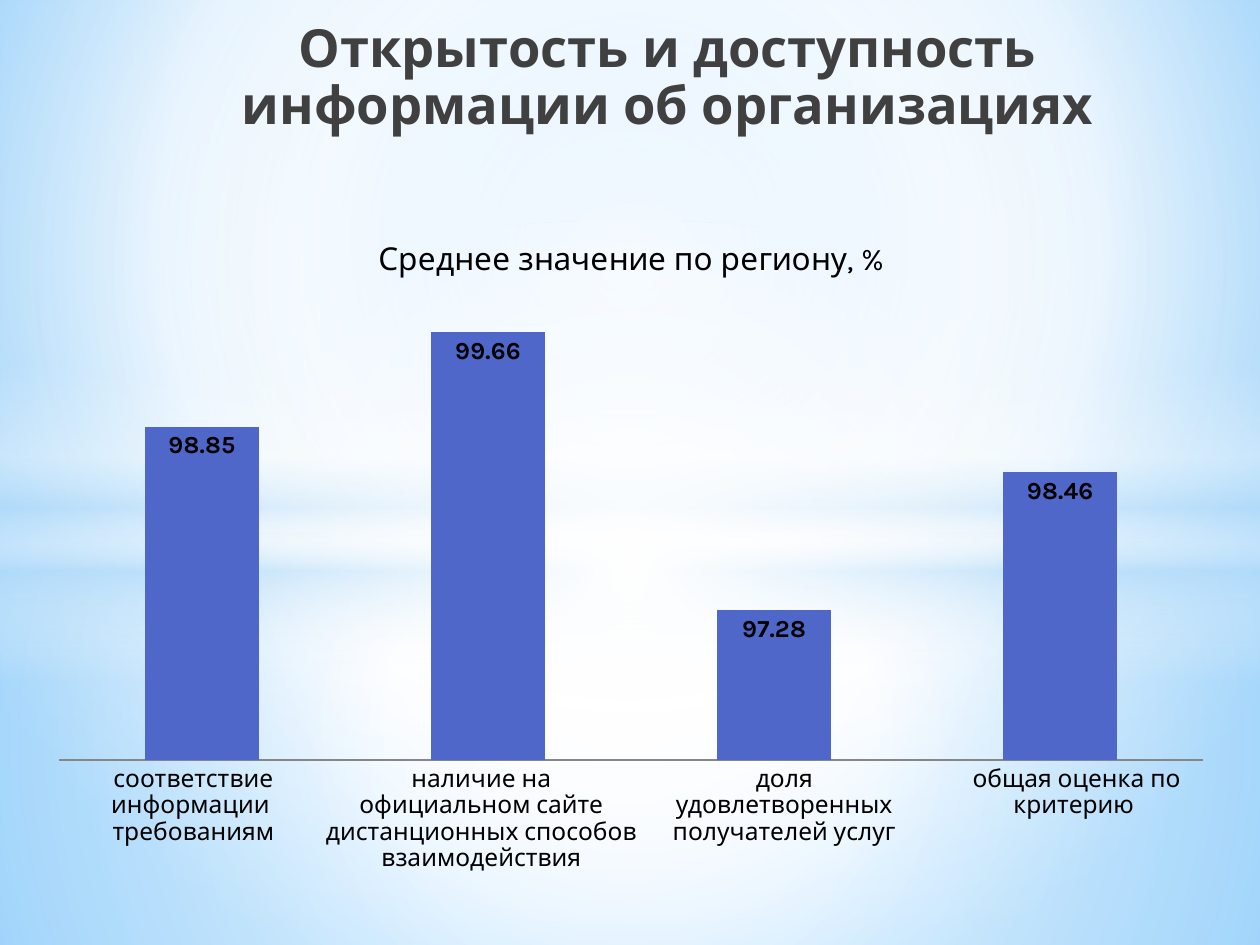
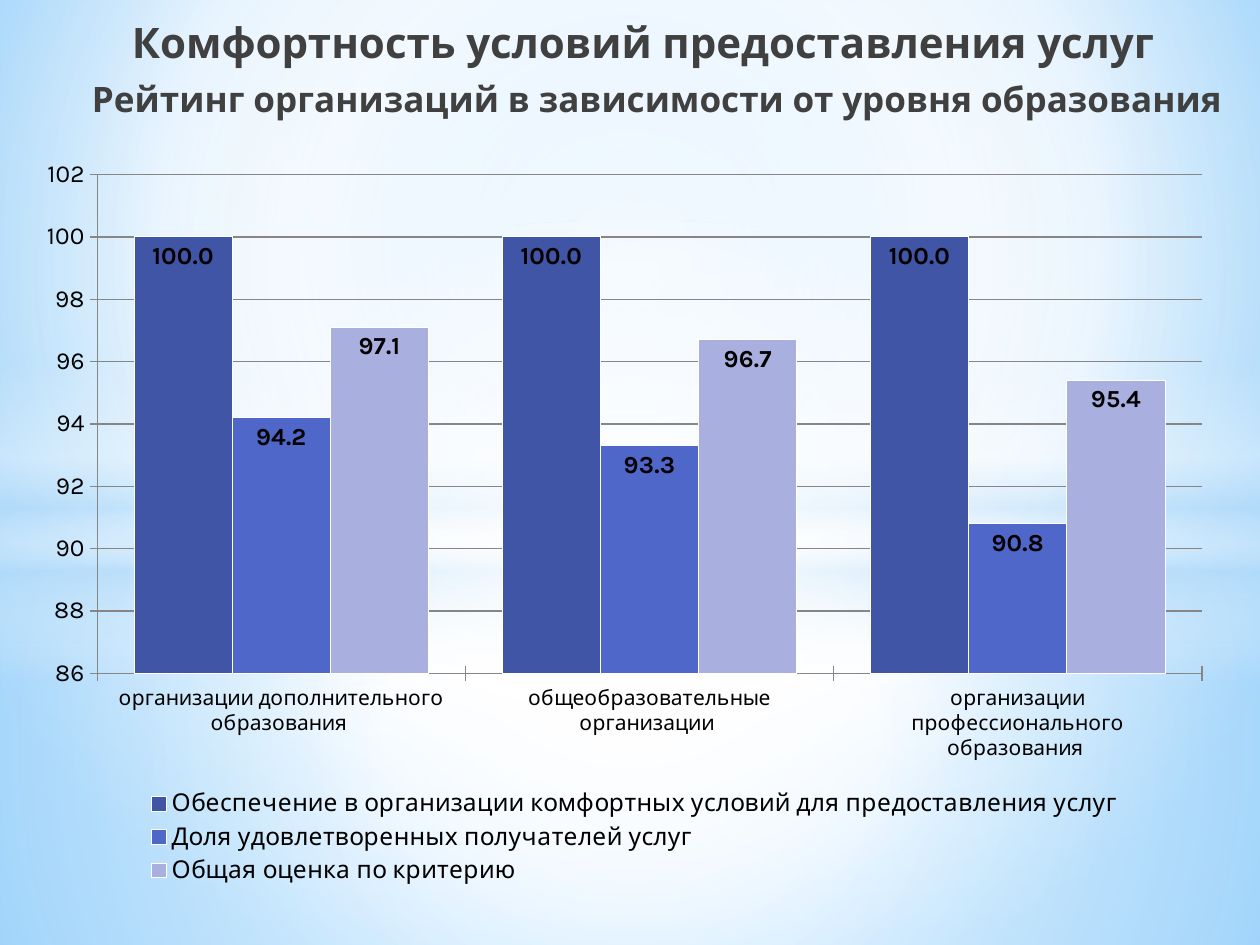
from dataclasses import dataclass
from typing import Any, Optional

from pptx import Presentation
from pptx.chart.chart import Chart
from pptx.chart.data import CategoryChartData
from pptx.dml.color import RGBColor
from pptx.enum.chart import (XL_CHART_TYPE, XL_LABEL_POSITION, XL_LEGEND_POSITION,
                             XL_TICK_LABEL_POSITION, XL_TICK_MARK)
from pptx.enum.shapes import MSO_SHAPE
from pptx.enum.text import PP_ALIGN
from pptx.oxml import parse_xml
from pptx.oxml.ns import nsdecls
from pptx.slide import Slide
from pptx.util import Inches, Pt

FONT = "Karla"
BLACK = RGBColor(0x00, 0x00, 0x00)
WHITE = RGBColor(0xFF, 0xFF, 0xFF)
TITLE_GREY = RGBColor(0x40, 0x40, 0x40)
AXIS_GREY = RGBColor(0x86, 0x86, 0x86)
DEEP_BLUE = RGBColor(0x40, 0x55, 0xA6)
BLUE = RGBColor(0x4E, 0x67, 0xC8)
PALE_BLUE = RGBColor(0xA9, 0xAF, 0xDE)
MIST = RGBColor(0xB4, 0xDC, 0xFA)
SKY = RGBColor(0x9E, 0xD5, 0xFF)
STRONG_SKY = RGBColor(0x5B, 0xB9, 0xFF)


@dataclass(frozen=True)
class Area:
    left: float
    top: float
    width: float
    height: float

    def lengths(self) -> list:
        return [Inches(side) for side in (self.left, self.top, self.width, self.height)]


@dataclass(frozen=True)
class Stop:
    position: int
    color: RGBColor
    opacity: int = 100


@dataclass(frozen=True)
class Gradient:
    stops: tuple[Stop, ...]
    focus: Optional[tuple[int, int, int, int]] = (50, 50, 50, 50)


@dataclass(frozen=True)
class Glow:
    kind: MSO_SHAPE
    area: Area
    gradient: Gradient


@dataclass(frozen=True)
class Label:
    text: str
    area: Area
    size: int = 14
    color: RGBColor = BLACK
    bold: bool = False
    left_inset: float = 0.1
    right_inset: float = 0.1


@dataclass(frozen=True)
class Bars:
    name: str
    values: tuple[float, ...]
    color: RGBColor


@dataclass(frozen=True)
class BarChart:
    area: Area
    plot: Area
    categories: tuple[str, ...]
    series: tuple[Bars, ...]
    gap: int
    scale: dict[str, float]
    number_format: str


BACKDROP = Gradient((Stop(0, SKY), Stop(60, WHITE), Stop(100, STRONG_SKY)), (20, 10, 20, 60))
GLOWS = (
    Glow(MSO_SHAPE.RECTANGLE, Area(0, 4.23, 10, 3.27),
         Gradient((Stop(0, WHITE, 91), Stop(37, WHITE, 76), Stop(100, MIST, 79)))),
    Glow(MSO_SHAPE.RECTANGLE, Area(0, 0, 10, 4.23),
         Gradient((Stop(0, WHITE, 89), Stop(48, WHITE, 62), Stop(100, MIST, 79)))),
    Glow(MSO_SHAPE.RECTANGLE, Area(0, 2.9, 10, 2.5),
         Gradient((Stop(0, WHITE, 0), Stop(29, WHITE, 30), Stop(45, MIST, 40),
                   Stop(55, WHITE, 26), Stop(65, MIST, 60), Stop(100, WHITE, 0)), None)),
    Glow(MSO_SHAPE.OVAL, Area(0, 1.75, 10, 5.58),
         Gradient((Stop(0, WHITE), Stop(54, WHITE, 0)))),
)

CAPTIONS = (
    Label("соответствие\nинформации \nтребованиям", Area(0.67, 6.03, 1.73, 0.81)),
    Label("наличие на официальном сайте дистанционных способов взаимодействия",
          Area(2.48, 6.03, 2.68, 0.81)),
    Label("доля удовлетворенных получателей услуг", Area(5.16, 6.03, 2.13, 0.81)),
    Label("общая оценка по критерию ", Area(7.6, 6.03, 1.89, 0.57)),
)

REGION_CHART = BarChart(
    Area(0.28, 1.7, 9.46, 4.42), Area(0.02, 0.14, 0.96, 0.84), ("1", "2", "3", "4"),
    (Bars("Series 1", (98.85, 99.66, 97.28, 98.46), BLUE),),
    150, {"minimum_scale": 96, "maximum_scale": 100}, "General",
)
RATING_CHART = BarChart(
    Area(0.2, 1.15, 9.53, 5.91), Area(0.06, 0.04, 0.92, 0.67),
    ("организации дополнительного образования ", "общеобразовательные организации ",
     "организации профессионального образования "),
    (Bars("Обеспечение в организации комфортных условий для предоставления услуг ",
          (100, 100, 100), DEEP_BLUE),
     Bars("Доля удовлетворенных получателей услуг", (94.2, 93.3, 90.8), BLUE),
     Bars("Общая оценка по критерию", (97.1, 96.7, 95.4), PALE_BLUE)),
    75, {"minimum_scale": 86, "maximum_scale": 102, "major_unit": 2}, "#,##0.0",
)


def apply(target: Any, values: dict[str, Any]) -> None:
    for name, value in values.items():
        setattr(target, name, value)


def style_font(font: Any, size: int, color: RGBColor = BLACK, bold: bool = False) -> None:
    apply(font, {"name": FONT, "size": Pt(size), "bold": bold})
    font.color.rgb = color


def paint_gradient(owner: Any, gradient: Gradient) -> None:
    owner.fill.solid() if hasattr(owner, "fill") else owner.background.fill.solid()
    stops = "".join(
        f'<a:gs pos="{stop.position * 1000}"><a:srgbClr val="{stop.color}">'
        f'<a:alpha val="{stop.opacity * 1000}"/></a:srgbClr></a:gs>'
        for stop in gradient.stops)
    direction = '<a:lin ang="5400000" scaled="0"/>'
    if gradient.focus:
        sides = " ".join(f'{side}="{part * 1000}"' for side, part in zip("ltrb", gradient.focus))
        direction = f'<a:path path="circle"><a:fillToRect {sides}/></a:path>'
    solid = owner.element.xpath(".//a:solidFill")[0]
    solid.getparent().replace(solid, parse_xml(
        f'<a:gradFill {nsdecls("a")} rotWithShape="1"><a:gsLst>{stops}</a:gsLst>'
        f'{direction}</a:gradFill>'))


def add_page(deck: Any) -> Slide:
    page = deck.slides.add_slide(deck.slide_layouts[6])
    paint_gradient(page, BACKDROP)
    for glow in GLOWS:
        shape = page.shapes.add_shape(glow.kind, *glow.area.lengths())
        shape.shadow.inherit = False
        shape.line.fill.background()
        paint_gradient(shape, glow.gradient)
    return page


def add_label(page: Slide, label: Label) -> None:
    box = page.shapes.add_textbox(*label.area.lengths())
    frame = box.text_frame
    apply(frame, {"word_wrap": True, "margin_left": Inches(label.left_inset),
                  "margin_right": Inches(label.right_inset), "text": label.text})
    for para in frame.paragraphs:
        apply(para, {"alignment": PP_ALIGN.CENTER, "line_spacing": 0.9})
        for span in para.runs:
            style_font(span.font, label.size, label.color, label.bold)


def add_title(page: Slide, text: str, area: Area, size: int) -> None:
    add_label(page, Label(text, area, size, TITLE_GREY, True, 0.25, 0.05))


def place(element: Any, index: int, area: Area, inner: bool = False) -> None:
    for old in element.xpath("./c:layout"):
        element.remove(old)
    target = '<c:layoutTarget val="inner"/>' if inner else ""
    element.insert(index, parse_xml(
        f'<c:layout {nsdecls("c")}><c:manualLayout>{target}'
        '<c:xMode val="edge"/><c:yMode val="edge"/>'
        f'<c:x val="{area.left}"/><c:y val="{area.top}"/>'
        f'<c:w val="{area.width}"/><c:h val="{area.height}"/></c:manualLayout></c:layout>'))


def add_bar_chart(page: Slide, design: BarChart) -> Chart:
    data = CategoryChartData()
    data.categories = design.categories
    for bars in design.series:
        data.add_series(bars.name, bars.values)
    chart = page.shapes.add_chart(
        XL_CHART_TYPE.COLUMN_CLUSTERED, *design.area.lengths(), data).chart
    apply(chart, {"has_title": False, "has_legend": False})
    style_font(chart.font, 14)
    plot = chart.plots[0]
    apply(plot, {"vary_by_categories": False, "gap_width": design.gap, "overlap": 0})
    for series, bars in zip(plot.series, design.series):
        series.format.fill.solid()
        series.format.fill.fore_color.rgb = bars.color
        labels = series.data_labels
        apply(labels, {"show_value": True, "position": XL_LABEL_POSITION.INSIDE_END,
                       "number_format": design.number_format,
                       "number_format_is_linked": False})
        style_font(labels.font, 14, bold=True)
    apply(chart.value_axis, design.scale)
    chart.category_axis.format.line.color.rgb = AXIS_GREY
    place(chart.element.xpath(".//c:plotArea")[0], 0, design.plot, True)
    return chart


def build_openness(deck: Any) -> None:
    page = add_page(deck)
    add_title(page, "Открытость и доступность информации об организациях",
              Area(0.91, 0.13, 8.58, 1.08), 30)
    chart = add_bar_chart(page, REGION_CHART)
    chart.has_title = True
    heading = chart.chart_title.text_frame
    heading.text = "Среднее значение по региону, %"
    style_font(heading.paragraphs[0].runs[0].font, 18)
    apply(chart.category_axis, {"tick_label_position": XL_TICK_LABEL_POSITION.NONE,
                                "major_tick_mark": XL_TICK_MARK.NONE})
    apply(chart.value_axis, {"visible": False, "has_major_gridlines": False})
    for caption in CAPTIONS:
        add_label(page, caption)


def build_comfort(deck: Any) -> None:
    page = add_page(deck)
    add_title(page, "Комфортность условий предоставления услуг",
              Area(0.28, 0.13, 9.45, 1.08), 24)
    add_title(page, "Рейтинг организаций в зависимости от уровня образования",
              Area(0.43, 0.6, 9.37, 0.45), 20)
    chart = add_bar_chart(page, RATING_CHART)
    for series in chart.plots[0].series:
        series.format.line.color.rgb = WHITE
    style_font(chart.category_axis.tick_labels.font, 12)
    for axis in (chart.category_axis, chart.value_axis):
        axis.major_tick_mark = XL_TICK_MARK.CROSS
        axis.format.line.color.rgb = AXIS_GREY
    chart.value_axis.major_gridlines.format.line.color.rgb = AXIS_GREY
    chart.has_legend = True
    legend = chart.legend
    apply(legend, {"position": XL_LEGEND_POSITION.BOTTOM, "include_in_layout": False})
    style_font(legend.font, 14)
    place(chart.element.xpath(".//c:legend")[0], 1, Area(0.09, 0.86, 0.84, 0.14))


def main() -> None:
    deck = Presentation()
    apply(deck, {"slide_width": Inches(10), "slide_height": Inches(7.5)})
    build_openness(deck)
    build_comfort(deck)
    deck.save("out.pptx")


if __name__ == "__main__":
    main()
